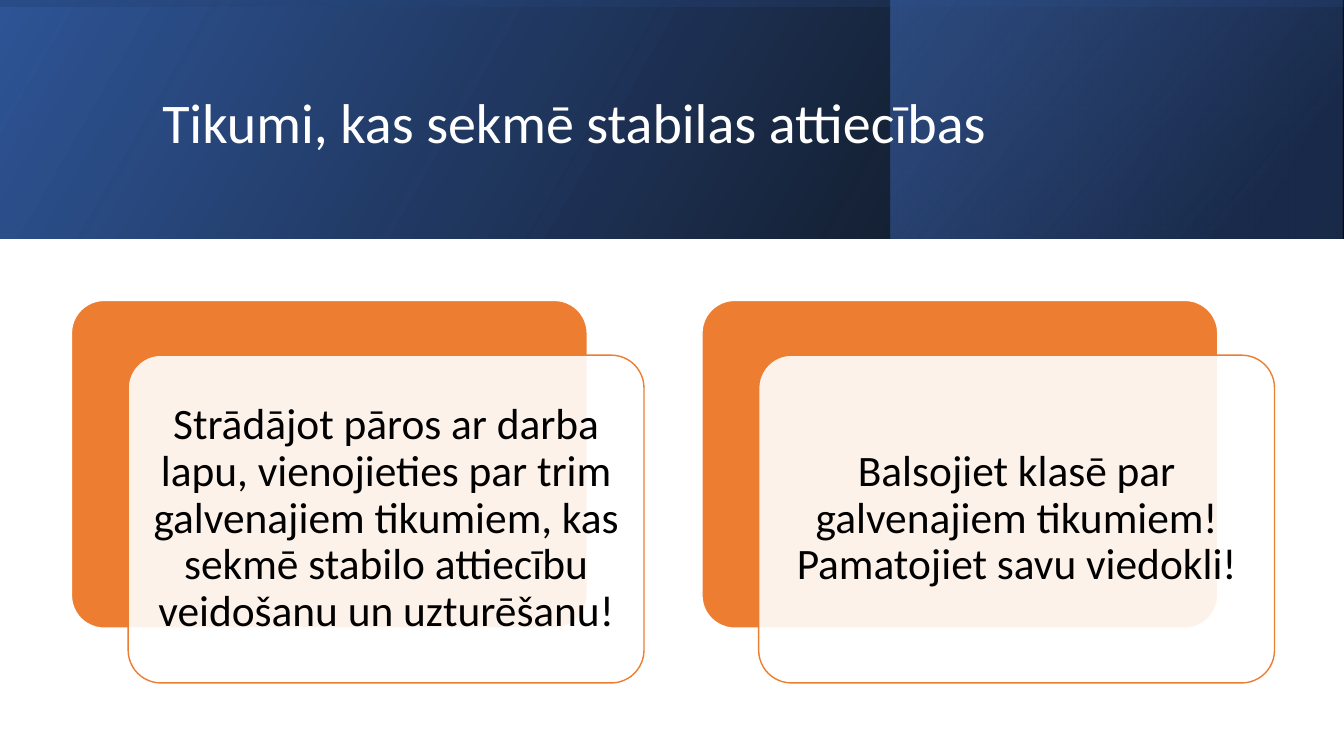
"""Build a slide with a gradient banner and two task cards."""
import pptx
import pptx.dml.color
import pptx.enum.shapes
import pptx.enum.text
import pptx.oxml.ns
import pptx.util
from lxml import etree

Cm = pptx.util.Cm
SLIDE_WIDTH, SLIDE_HEIGHT = 33.87, 19.05
BANNER_HEIGHT = 6.02
ORANGE, WHITE, BLACK = "ED7D31", "FFFFFF", "000000"
TITLE_FORMAT = {"size": pptx.util.Pt(40), "name": "Calibri"}
CARD_FORMAT = {"size": pptx.util.Pt(31), "name": "Calibri"}
CARD_LEFT, CARD_TOP, CARD_WIDTH, CARD_HEIGHT = 1.8, 7.57, 13, 8.26
CARD_PITCH = 15.89
FRONT_SHIFT_X, FRONT_SHIFT_Y = 1.43, 1.38
TEXT_INSET, TEXT_MARGIN = 0.25, 0.33
TASKS = [
    "Strādājot pāros ar darba lapu, vienojieties par trim galvenajiem "
    "tikumiem, kas sekmē stabilo attiecību veidošanu un uzturēšanu!",
    "Balsojiet klasē par galvenajiem tikumiem! Pamatojiet savu viedokli!",
]


def color(value):
    """Turn a hex string into a colour."""
    return pptx.dml.color.RGBColor.from_string(value)


def set_opacity(fill_parent, percents):
    """Give each colour below an element its opacity in percent."""
    qn = pptx.oxml.ns.qn
    for element, percent in zip(list(fill_parent.iter(qn("a:srgbClr"))), percents):
        etree.SubElement(element, qn("a:alpha")).set("val", str(percent * 1000))


def add_box(slide, kind, left, top, width, height):
    """Add a preset shape without a shadow."""
    shape = slide.shapes.add_shape(kind, Cm(left), Cm(top), Cm(width), Cm(height))
    shape.shadow.inherit = False
    return shape


def add_gradient(slide, left, top, width, height, angle, stops, rotation=0):
    """Add a mirrored rectangle filled with a translucent gradient."""
    kind = pptx.enum.shapes.MSO_SHAPE.RECTANGLE
    shape = add_box(slide, kind, left, top, width, height)
    shape.rotation = rotation
    shape._element.spPr.find(pptx.oxml.ns.qn("a:xfrm")).set("flipH", "1")
    shape.line.fill.background()
    shape.fill.gradient()
    shape.fill.gradient_angle = 360 - angle
    for stop, (position, value, _) in zip(shape.fill.gradient_stops, stops):
        stop.position = position
        stop.color.rgb = color(value)
    set_opacity(shape._element.spPr, [opacity for _, _, opacity in stops])


def add_card(slide, left, top, fill, line, opacity=100):
    """Add one rounded card."""
    kind = pptx.enum.shapes.MSO_SHAPE.ROUNDED_RECTANGLE
    shape = add_box(slide, kind, left, top, CARD_WIDTH, CARD_HEIGHT)
    shape.adjustments[0] = 0.1
    shape.fill.solid()
    shape.fill.fore_color.rgb = color(fill)
    if opacity < 100:
        set_opacity(shape._element.spPr, [opacity])
    shape.line.color.rgb = color(line)
    shape.line.width = pptx.util.Pt(1)


def add_text(slide, left, top, width, height, text, value, font_format,
             alignment=pptx.enum.text.PP_ALIGN.LEFT, margin=None):
    """Add a wrapped, vertically centred text box."""
    shape = slide.shapes.add_textbox(Cm(left), Cm(top), Cm(width), Cm(height))
    frame = shape.text_frame
    frame.word_wrap = True
    frame.vertical_anchor = pptx.enum.text.MSO_ANCHOR.MIDDLE
    if margin is not None:
        for side in ("left", "top", "right", "bottom"):
            setattr(frame, f"margin_{side}", Cm(margin))
    paragraph = frame.paragraphs[0]
    paragraph.alignment = alignment
    paragraph.line_spacing = 0.9
    run = paragraph.add_run()
    run.text = text
    run.font.color.rgb = color(value)
    for name, setting in font_format.items():
        setattr(run.font, name, setting)


def add_banner(slide):
    """Add the layered gradients and the title."""
    add_gradient(slide, 0, 0, SLIDE_WIDTH, BANNER_HEIGHT, 330,
                 [(0, BLACK, 96), (1, "2F5597", 100)])
    add_gradient(slide, 22.45, 0, 11.39, BANNER_HEIGHT, 320,
                 [(0.19, "203864", 68), (1, "4472C4", 48)])
    shift = (SLIDE_WIDTH - BANNER_HEIGHT) / 2
    add_gradient(slide, shift, -shift, BANNER_HEIGHT, SLIDE_WIDTH, 350,
                 [(0.23, "2F5597", 16), (0.99, BLACK, 45)], rotation=270)
    add_text(slide, 3.84, 0.97, 27, 4.37, "Tikumi, kas sekmē stabilas attiecības",
             WHITE, TITLE_FORMAT)


def add_task(slide, left, text):
    """Add a pair of overlapping cards with a task."""
    front_left, front_top = left + FRONT_SHIFT_X, CARD_TOP + FRONT_SHIFT_Y
    add_card(slide, left, CARD_TOP, ORANGE, WHITE)
    add_card(slide, front_left, front_top, WHITE, ORANGE, opacity=90)
    add_text(slide, front_left + TEXT_INSET, front_top + TEXT_INSET,
             CARD_WIDTH - 2 * TEXT_INSET, CARD_HEIGHT - 2 * TEXT_INSET,
             text, BLACK, CARD_FORMAT, pptx.enum.text.PP_ALIGN.CENTER, TEXT_MARGIN)


def main():
    """Build and save the presentation."""
    presentation = pptx.Presentation()
    presentation.slide_width = Cm(SLIDE_WIDTH)
    presentation.slide_height = Cm(SLIDE_HEIGHT)
    slide = presentation.slides.add_slide(presentation.slide_layouts[6])
    add_banner(slide)
    for index, text in enumerate(TASKS):
        add_task(slide, CARD_LEFT + index * CARD_PITCH, text)
    presentation.save("out.pptx")


if __name__ == "__main__":
    main()
